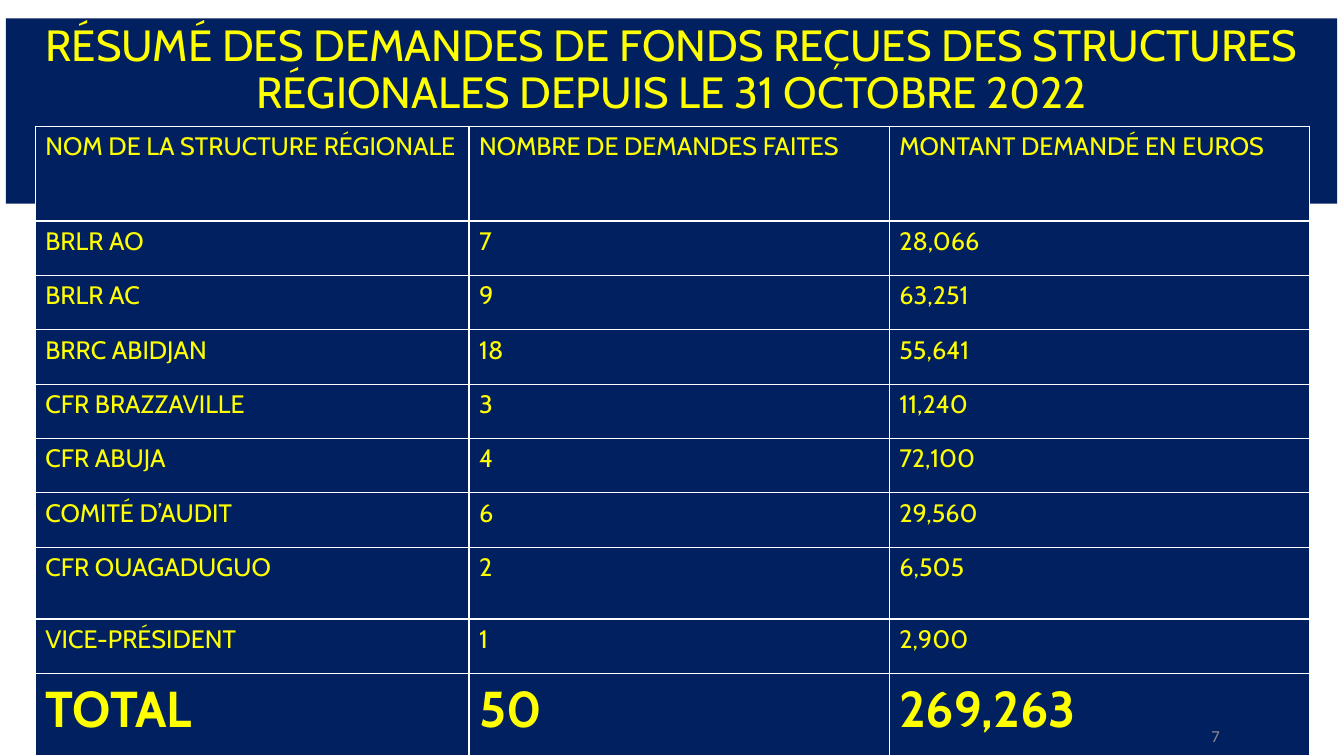
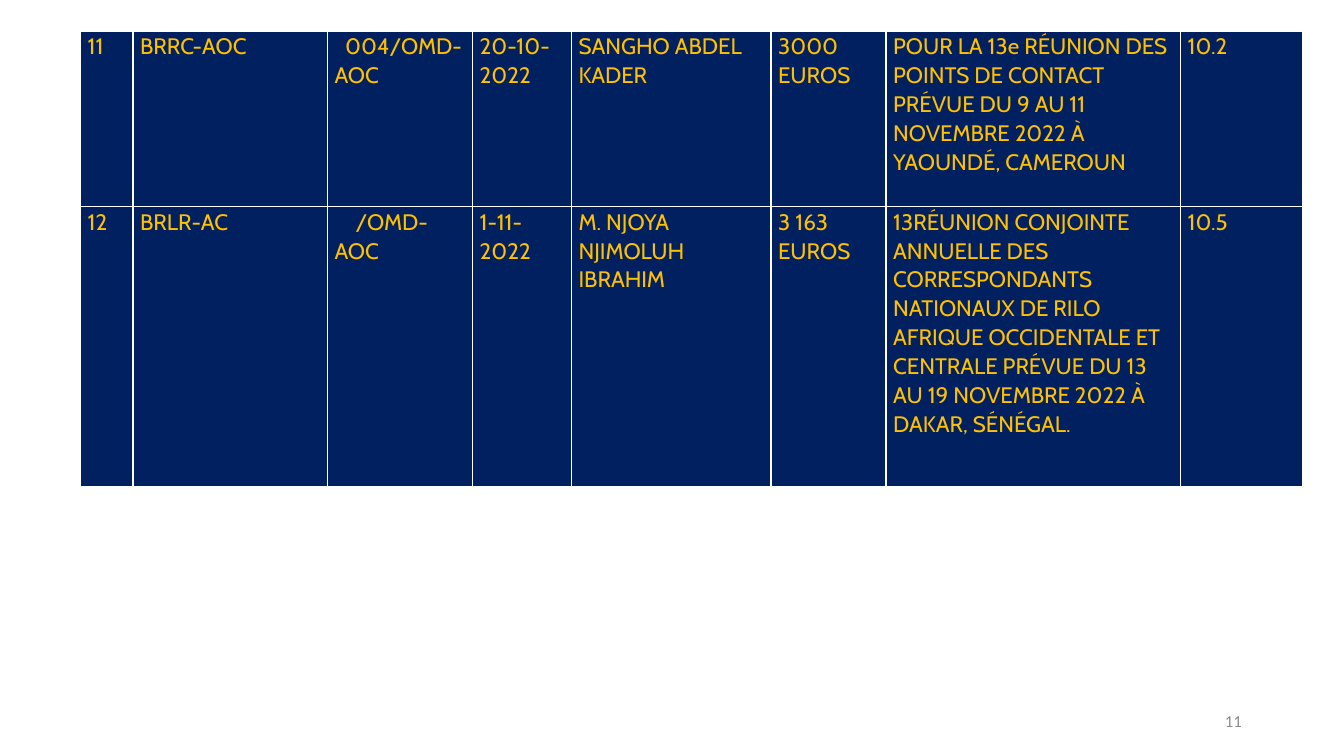
from dataclasses import dataclass

from lxml import etree
from pptx import Presentation
from pptx.dml.color import RGBColor
from pptx.enum.text import MSO_ANCHOR, MSO_AUTO_SIZE, PP_ALIGN
from pptx.oxml.ns import qn
from pptx.util import Cm, Pt

CENTER, RIGHT = PP_ALIGN.CENTER, PP_ALIGN.RIGHT
TOP, MIDDLE = MSO_ANCHOR.TOP, MSO_ANCHOR.MIDDLE
NO_AUTOFIT = MSO_AUTO_SIZE.NONE
TITLE_ONLY, BLANK = 5, 6


@dataclass(frozen=True)
class Theme:
    navy: RGBColor = RGBColor.from_string("002060")
    yellow: RGBColor = RGBColor.from_string("FFFF00")
    gold: RGBColor = RGBColor.from_string("FFC000")
    grey: RGBColor = RGBColor.from_string("8C8C8C")
    border: str = "FFFFFF"
    border_width: Pt = Pt(1)
    font: str = "Cabin"
    number_font: str = "Calibri"
    title_size: Pt = Pt(31.2)
    summary_size: Pt = Pt(18)
    total_size: Pt = Pt(36)
    request_size: Pt = Pt(16)
    number_size: Pt = Pt(12)


THEME = Theme()


def format_text(paragraph, size, color, font=THEME.font, bold=False):
    for run in paragraph.runs:
        run.font.name = font
        run.font.size = size
        run.font.bold = bold
        run.font.color.rgb = color


def add_grid(slide, left, top, widths, heights, rows, size, color):
    """Add a navy table with white rules; widths and heights are in centimetres."""
    table = slide.shapes.add_table(
        len(heights), len(widths), Cm(left), Cm(top), Cm(sum(widths)), Cm(sum(heights))
    ).table
    table.first_row = table.horz_banding = False
    for column, width in zip(table.columns, widths):
        column.width = Cm(width)
    for row, height, texts in zip(table.rows, heights, rows):
        row.height = Cm(height)
        for cell, text in zip(row.cells, texts):
            cell.text_frame.text = text
            format_text(cell.text_frame.paragraphs[0], size, color)
            properties = cell._tc.get_or_add_tcPr()
            for side in ("a:lnL", "a:lnR", "a:lnT", "a:lnB"):
                line = etree.SubElement(properties, qn(side), w=str(THEME.border_width))
                fill = etree.SubElement(line, qn("a:solidFill"))
                etree.SubElement(fill, qn("a:srgbClr"), val=THEME.border)
            cell.fill.solid()
            cell.fill.fore_color.rgb = THEME.navy
    return table


presentation = Presentation()
presentation.slide_width = Cm(33.87)
presentation.slide_height = Cm(19.05)

# Summary of requests
summary_slide = presentation.slides.add_slide(presentation.slide_layouts[TITLE_ONLY])
title = summary_slide.shapes.title
title.left, title.top, title.width, title.height = Cm(0.15), Cm(0.46), Cm(33.55), Cm(4.67)
title.fill.solid()
title.fill.fore_color.rgb = THEME.navy
title.text_frame.text = (
    "RÉSUMÉ DES DEMANDES DE FONDS REÇUES DES STRUCTURES RÉGIONALES "
    "DEPUIS LE 31 OCTOBRE 2022"
)
title.text_frame.auto_size = NO_AUTOFIT
title.text_frame.vertical_anchor = TOP
title_paragraph = title.text_frame.paragraphs[0]
title_paragraph.alignment = CENTER
title_paragraph.line_spacing = 0.9
format_text(title_paragraph, THEME.title_size, THEME.yellow)

summary_rows = [
    ("NOM DE LA STRUCTURE RÉGIONALE", "NOMBRE DE DEMANDES FAITES", "MONTANT DEMANDÉ EN EUROS"),
    ("BRLR AO", "7", "28,066"),
    ("BRLR AC", "9", "63,251"),
    ("BRRC ABIDJAN", "18", "55,641"),
    ("CFR BRAZZAVILLE", "3", "11,240"),
    ("CFR ABUJA", "4", "72,100"),
    ("COMITÉ D’AUDIT", "6", "29,560"),
    ("CFR OUAGADUGUO", "2", "6,505"),
    ("VICE-PRÉSIDENT", "1", "2,900"),
    ("TOTAL", "50", "269,263"),
]
summary_heights = [2.39] + [1.37] * 6 + [1.81, 1.37, 2.08]
summary_table = add_grid(
    summary_slide, 0.89, 3.18, [10.93, 10.59, 10.59], summary_heights,
    summary_rows, THEME.summary_size, THEME.yellow,
)
for cell in summary_table.rows[len(summary_rows) - 1].cells:
    format_text(cell.text_frame.paragraphs[0], THEME.total_size, THEME.yellow, bold=True)

# Individual requests
request_slide = presentation.slides.add_slide(presentation.slide_layouts[BLANK])
request_rows = [
    (
        "11", "BRRC-AOC", "004/OMD-AOC", "20-10-2022", "SANGHO ABDEL KADER", "3000 EUROS",
        "POUR LA 13e RÉUNION DES POINTS DE CONTACT PRÉVUE DU 9 AU "
        "11 NOVEMBRE 2022 À YAOUNDÉ, CAMEROUN",
        "10.2",
    ),
    (
        "12", "BRLR-AC", "/OMD-AOC", "1-11-2022", "M. NJOYA NJIMOLUH IBRAHIM", "3 163 EUROS",
        "13RÉUNION CONJOINTE ANNUELLE DES CORRESPONDANTS NATIONAUX DE RILO "
        "AFRIQUE OCCIDENTALE ET CENTRALE PRÉVUE DU 13 AU 19 NOVEMBRE 2022 "
        "À DAKAR, SÉNÉGAL.",
        "10.5",
    ),
]
request_table = add_grid(
    request_slide, 2.03, 0.79, [1.32, 4.9, 3.66, 2.49, 5.03, 2.9, 7.42, 3.07], [4.42, 7.06],
    request_rows, THEME.request_size, THEME.gold,
)
for cell in request_table.iter_cells():
    cell.margin_left = cell.margin_right = Cm(0.18)
    cell.margin_top = cell.margin_bottom = 0
    cell.text_frame.paragraphs[0].line_spacing = 1.07

REFERENCE_COLUMN = 2
for row_index, indent in enumerate((0.27, 0.53)):
    reference = request_table.cell(row_index, REFERENCE_COLUMN).text_frame.paragraphs[0]
    reference_properties = reference._p.get_or_add_pPr()
    reference_properties.set("marL", "0")
    reference_properties.set("indent", str(Cm(indent)))

# Page numbers
for slide, number, left, top in (
    (summary_slide, "7", 23.37, 18.03),
    (request_slide, "11", 23.93, 17.65),
):
    number_box = slide.shapes.add_textbox(Cm(left), Cm(top), Cm(7.62), Cm(1.02))
    number_box.text_frame.word_wrap = True
    number_box.text_frame.vertical_anchor = MIDDLE
    number_box.text_frame.text = number
    number_paragraph = number_box.text_frame.paragraphs[0]
    number_paragraph.alignment = RIGHT
    format_text(number_paragraph, THEME.number_size, THEME.grey, THEME.number_font)

presentation.save("out.pptx")
